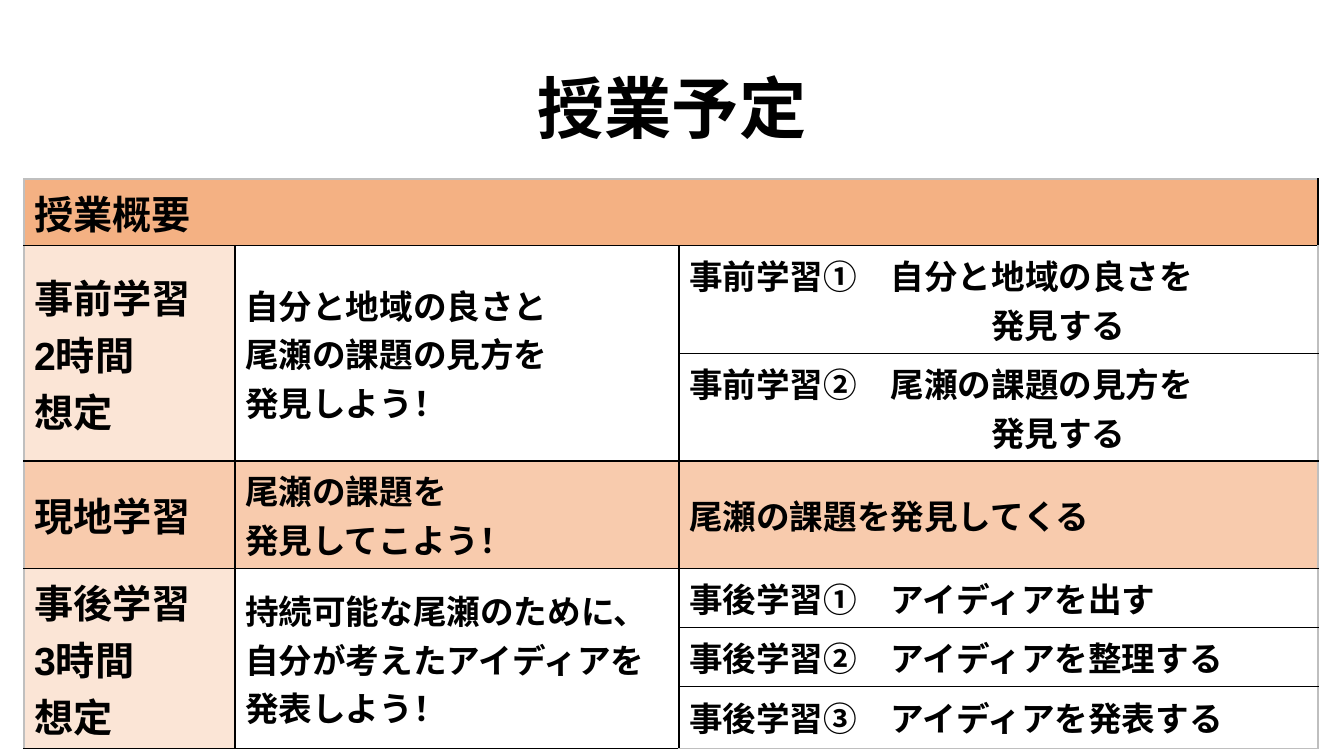
from lxml.etree import SubElement
from pptx import Presentation
from pptx.dml.color import RGBColor
from pptx.enum.text import MSO_ANCHOR, PP_ALIGN
from pptx.oxml.ns import qn
from pptx.util import Emu, Pt

EMU_PER_PX = 914400 / 100.8
BLACK = RGBColor(0x00, 0x00, 0x00)
WHITE = RGBColor(0xFF, 0xFF, 0xFF)
GRAY = RGBColor(0xBF, 0xBF, 0xBF)
HEADER_ORANGE = RGBColor(0xF4, 0xB1, 0x83)
FIELD_ORANGE = RGBColor(0xF8, 0xCB, 0xAD)
PALE_ORANGE = RGBColor(0xFB, 0xE5, 0xD6)

JAPANESE_FONT = "Noto Sans CJK JP"
LABEL_SIZE, BODY_SIZE = 28, 24
HANGING_INDENT = 302

COLUMN_WIDTHS = [211, 444, 639]
ROW_HEIGHTS = [59, 95, 95, 95, 58, 58, 52]

# row, column, rows spanned, columns spanned, fill, lines
CELLS = [
    (0, 0, 1, 3, HEADER_ORANGE, ["授業概要"]),
    (1, 0, 2, 1, PALE_ORANGE, ["事前学習", "2時間", "想定"]),
    (1, 1, 2, 1, WHITE, ["自分と地域の良さと", "尾瀬の課題の見方を", "発見しよう！"]),
    (1, 2, 1, 1, WHITE, ["事前学習①　自分と地域の良さを", "発見する"]),
    (2, 2, 1, 1, WHITE, ["事前学習②　尾瀬の課題の見方を", "発見する"]),
    (3, 0, 1, 1, FIELD_ORANGE, ["現地学習"]),
    (3, 1, 1, 1, FIELD_ORANGE, ["尾瀬の課題を", "発見してこよう！"]),
    (3, 2, 1, 1, FIELD_ORANGE, ["尾瀬の課題を発見してくる"]),
    (4, 0, 3, 1, PALE_ORANGE, ["事後学習", "3時間", "想定"]),
    (4, 1, 3, 1, WHITE, ["持続可能な尾瀬のために、", "自分が考えたアイディアを", "発表しよう！"]),
    (4, 2, 1, 1, WHITE, ["事後学習①　アイディアを出す"]),
    (5, 2, 1, 1, WHITE, ["事後学習②　アイディアを整理する"]),
    (6, 2, 1, 1, WHITE, ["事後学習③　アイディアを発表する"]),
]


def px(length):
    return Emu(round(length * EMU_PER_PX))


def format_paragraph(paragraph, size, latin_font):
    font = paragraph.font
    font.size = Pt(size)
    font.bold = True
    font.name = latin_font
    font.color.rgb = BLACK
    properties = paragraph._p.pPr.find(qn("a:defRPr"))
    SubElement(properties, qn("a:ea"), typeface=JAPANESE_FONT)


def add_title(slide, text):
    title = slide.shapes.title
    title.left, title.top, title.width, title.height = px(0), px(25), px(1344), px(127)
    title.text_frame.vertical_anchor = MSO_ANCHOR.BOTTOM
    paragraph = title.text_frame.paragraphs[0]
    paragraph.text = text
    paragraph.alignment = PP_ALIGN.CENTER
    paragraph.line_spacing = 1.5
    format_paragraph(paragraph, 48, JAPANESE_FONT)


def set_borders(cell, row, column):
    """Draw black inner lines and gray lines on the table's outer edge."""
    outer = {
        "a:lnL": column == 0,
        "a:lnR": column == len(COLUMN_WIDTHS) - 1,
        "a:lnT": row == 0,
        "a:lnB": row == len(ROW_HEIGHTS) - 1,
    }
    properties = cell._tc.get_or_add_tcPr()
    for side, is_outer in outer.items():
        line = SubElement(properties, qn(side), w=str(Pt(1)))
        fill = SubElement(line, qn("a:solidFill"))
        SubElement(fill, qn("a:srgbClr"), val=str(GRAY if is_outer else BLACK))


def fill_cell(cell, lines, column, color):
    cell.fill.solid()
    cell.fill.fore_color.rgb = color
    cell.vertical_anchor = MSO_ANCHOR.MIDDLE
    cell.text = "\n".join(lines)
    for index, paragraph in enumerate(cell.text_frame.paragraphs):
        if column == 2 and index > 0:
            paragraph._p.get_or_add_pPr().set("marL", str(px(HANGING_INDENT)))
        format_paragraph(paragraph, LABEL_SIZE if column == 0 else BODY_SIZE, "Arial")


def add_schedule(slide):
    table = slide.shapes.add_table(
        len(ROW_HEIGHTS), len(COLUMN_WIDTHS), px(24), px(179),
        px(sum(COLUMN_WIDTHS)), px(sum(ROW_HEIGHTS)),
    ).table
    table.first_row = False
    table.horz_banding = False
    for column, width in zip(table.columns, COLUMN_WIDTHS):
        column.width = px(width)
    for row, height in zip(table.rows, ROW_HEIGHTS):
        row.height = px(height)
    for row in range(len(ROW_HEIGHTS)):
        for column in range(len(COLUMN_WIDTHS)):
            set_borders(table.cell(row, column), row, column)
    for row, column, row_span, column_span, color, lines in CELLS:
        cell = table.cell(row, column)
        if row_span * column_span > 1:
            cell.merge(table.cell(row + row_span - 1, column + column_span - 1))
        fill_cell(cell, lines, column, color)


def main():
    presentation = Presentation()
    presentation.slide_width, presentation.slide_height = px(1344), px(756)
    slide = presentation.slides.add_slide(presentation.slide_layouts[0])
    subtitle = slide.placeholders[1].element
    subtitle.getparent().remove(subtitle)
    add_title(slide, "授業予定")
    add_schedule(slide)
    presentation.save("out.pptx")


if __name__ == "__main__":
    main()
